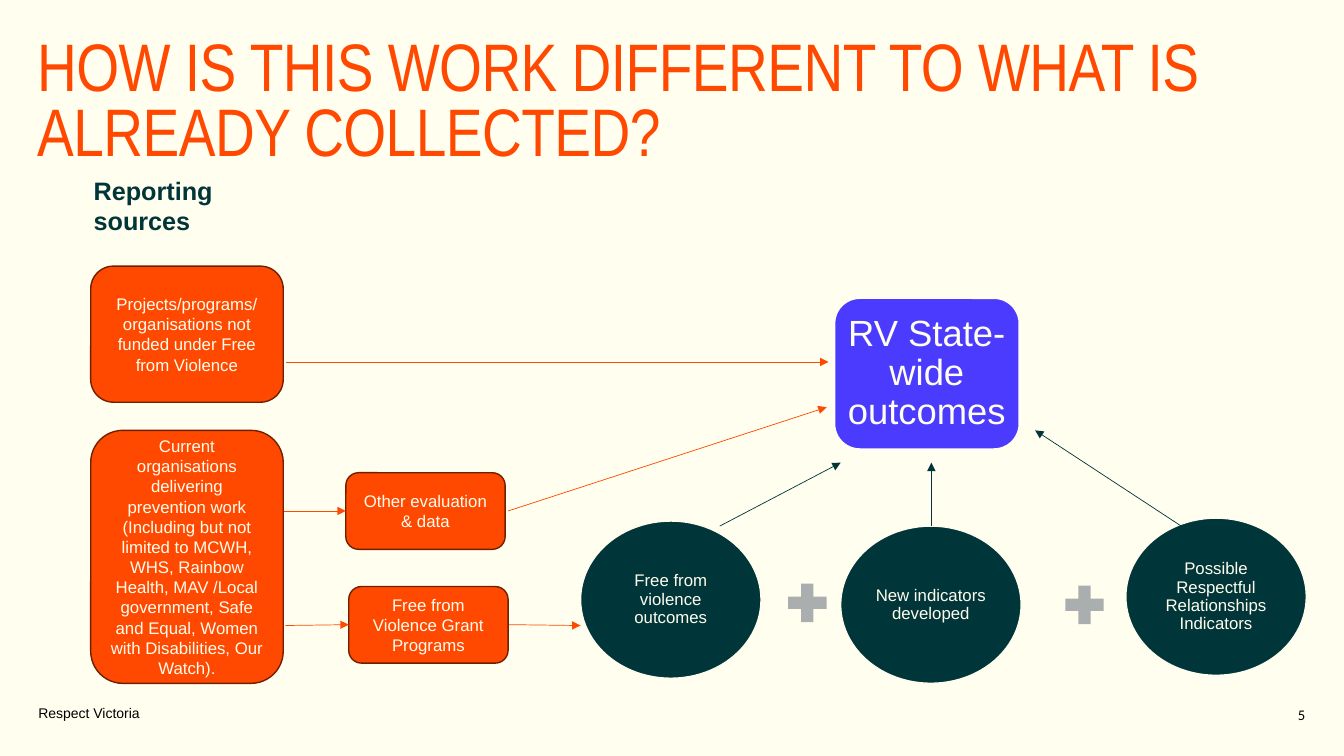
from dataclasses import dataclass

from lxml import etree
from pptx import Presentation
from pptx.dml.color import RGBColor
from pptx.enum.shapes import MSO_CONNECTOR, MSO_SHAPE
from pptx.enum.text import MSO_ANCHOR, PP_ALIGN
from pptx.oxml.ns import qn
from pptx.util import Pt

ROUND, OVAL, CROSS = MSO_SHAPE.ROUNDED_RECTANGLE, MSO_SHAPE.OVAL, MSO_SHAPE.CROSS
LEFT, MID, RIGHT = PP_ALIGN.LEFT, PP_ALIGN.CENTER, PP_ALIGN.RIGHT
TOP, CENTRE, BOTTOM = MSO_ANCHOR.TOP, MSO_ANCHOR.MIDDLE, MSO_ANCHOR.BOTTOM
STRAIGHT = MSO_CONNECTOR.STRAIGHT

CREAM, PAPER, ORANGE, BROWN = "FFFDEE", "FFFEEF", "FF4900", "702000"
GREEN, PURPLE, GREY, BLACK = "003639", "4A3BFF", "ABAEAF", "000000"


@dataclass
class Style:
    size: float
    color: str = CREAM
    font: str = "Arial"
    bold: bool = False
    track: int = 0
    align: PP_ALIGN = MID
    anchor: MSO_ANCHOR = CENTRE
    pad: tuple[float, float] = (7.2, 3.6)
    lead: float = 1.0
    after: float = 0


@dataclass
class Label:
    text: str
    x: float
    y: float
    w: float
    h: float
    style: Style


@dataclass
class Node(Label):
    kind: MSO_SHAPE
    fill: str
    edge: str


@dataclass
class Arrow:
    x1: float
    y1: float
    x2: float
    y2: float
    color: str


SOURCE = Style(12)
GOAL = Style(26, pad=(2.6, 2.6), lead=0.9, after=9)
PART = Style(12, pad=(1.3, 0.7), lead=0.9, after=4.2)
TITLE = Style(48, ORANGE, "Arial Narrow", track=-40, align=LEFT, anchor=TOP,
              pad=(0, 0), lead=0.8)
HEAD = Style(18, GREEN, bold=True, align=LEFT, anchor=TOP)
FOOT = Style(10, BLACK, align=LEFT, anchor=BOTTOM, pad=(0, 0))
PAGE = Style(10.5, BLACK, "Calibri", align=RIGHT, anchor=BOTTOM, pad=(0, 0))

LABELS = [
    Label("Respect Victoria", 27.4, 486.7, 295.2, 28.8, FOOT),
    Label("5", 882.7, 488.2, 49.7, 28.8, PAGE),
    Label("HOW IS THIS WORK DIFFERENT TO WHAT IS ALREADY COLLECTED?",
          26.6, 28.8, 873.4, 143.3, TITLE),
    Label("Reporting sources", 59.8, 121.7, 151.9, 51.1, HEAD),
]


def source(text: str, x: float, y: float, w: float, h: float) -> Node:
    return Node(text, x, y, w, h, SOURCE, ROUND, ORANGE, BROWN)


def part(text: str, x: float, y: float) -> Node:
    return Node(text, x, y, 128.9, 112.3, PART, OVAL, GREEN, CREAM)


NODES = [
    source("Projects/programs/ organisations not funded under Free from Violence",
           64.8, 190.1, 137.5, 97.2),
    source("Current organisations delivering prevention work\n"
           "(Including but not limited to MCWH, WHS, Rainbow Health, "
           "MAV /Local government, Safe and Equal, Women with Disabilities, "
           "Our Watch).", 64.8, 307.4, 137.5, 180.7),
    source("Other evaluation & data", 247, 337.7, 113.8, 54.7),
    source("Free from Violence Grant Programs", 249.1, 419, 113.8, 54.7),
    Node("RV State-wide outcomes", 596.2, 213.1, 131.8, 107.6,
         GOAL, ROUND, PURPLE, CREAM),
    part("Free from violence outcomes", 414.7, 372.2),
    part("New indicators developed", 600.5, 375.8),
    part("Possible Respectful Relationships Indicators", 804.2, 370.1),
]

PLUSES = [(563, 416.9), (761, 418.3)]

ARROWS = [
    Arrow(204.5, 258.5, 591.8, 258.5, ORANGE),
    Arrow(203, 365, 247, 365, ORANGE),
    Arrow(362.9, 365, 590.4, 290.9, ORANGE),
    Arrow(203.8, 446.8, 249.1, 446.2, ORANGE),
    Arrow(363.6, 446.2, 414.7, 446.8, ORANGE),
    Arrow(514.1, 375.8, 600.5, 330.5, GREEN),
    Arrow(665.3, 375.8, 665.3, 330.5, GREEN),
    Arrow(843.8, 375.8, 739.4, 307.4, GREEN),
]


def rgb(code: str) -> RGBColor:
    return RGBColor.from_string(code)


def write(shape, text: str, style: Style) -> None:
    frame = shape.text_frame
    frame.word_wrap = True
    frame.vertical_anchor = style.anchor
    frame.margin_left = frame.margin_right = Pt(style.pad[0])
    frame.margin_top = frame.margin_bottom = Pt(style.pad[1])
    para = frame.paragraphs[0]
    para.alignment = style.align
    para.line_spacing = style.lead
    para.space_after = Pt(style.after)
    for i, line in enumerate(text.split("\n")):
        if i:
            para.add_line_break()
        run = para.add_run()
        run.text = line
        run.font.size = Pt(style.size)
        run.font.name = style.font
        run.font.bold = style.bold
        run.font.color.rgb = rgb(style.color)
        if style.track:
            run._r.get_or_add_rPr().set("spc", str(style.track))


def draw_label(slide, label: Label) -> None:
    box = slide.shapes.add_textbox(Pt(label.x), Pt(label.y), Pt(label.w), Pt(label.h))
    write(box, label.text, label.style)


def draw_node(slide, node: Node) -> None:
    shape = slide.shapes.add_shape(
        node.kind, Pt(node.x), Pt(node.y), Pt(node.w), Pt(node.h))
    shape.shadow.inherit = False
    shape.fill.solid()
    shape.fill.fore_color.rgb = rgb(node.fill)
    shape.line.color.rgb = rgb(node.edge)
    shape.line.width = Pt(1)
    write(shape, node.text, node.style)


def draw_plus(slide, x: float, y: float) -> None:
    plus = slide.shapes.add_shape(CROSS, Pt(x), Pt(y), Pt(27.4), Pt(27.4))
    plus.adjustments[0] = 0.34
    plus.shadow.inherit = False
    plus.fill.solid()
    plus.fill.fore_color.rgb = rgb(GREY)
    plus.line.fill.background()


def draw_arrow(slide, arrow: Arrow) -> None:
    link = slide.shapes.add_connector(
        STRAIGHT, Pt(arrow.x1), Pt(arrow.y1), Pt(arrow.x2), Pt(arrow.y2))
    link.line.color.rgb = rgb(arrow.color)
    link.line.width = Pt(0.5)
    etree.SubElement(link.line._get_or_add_ln(), qn("a:tailEnd"), type="triangle")
    etree.SubElement(link._element.spPr, qn("a:effectLst"))


def main() -> None:
    deck = Presentation()
    deck.slide_width, deck.slide_height = Pt(960), Pt(540)
    slide = deck.slides.add_slide(deck.slide_layouts[6])
    slide.background.fill.solid()
    slide.background.fill.fore_color.rgb = rgb(PAPER)
    for label in LABELS:
        draw_label(slide, label)
    for x, y in PLUSES:
        draw_plus(slide, x, y)
    for node in NODES:
        draw_node(slide, node)
    for arrow in ARROWS:
        draw_arrow(slide, arrow)
    deck.save("out.pptx")


if __name__ == "__main__":
    main()
